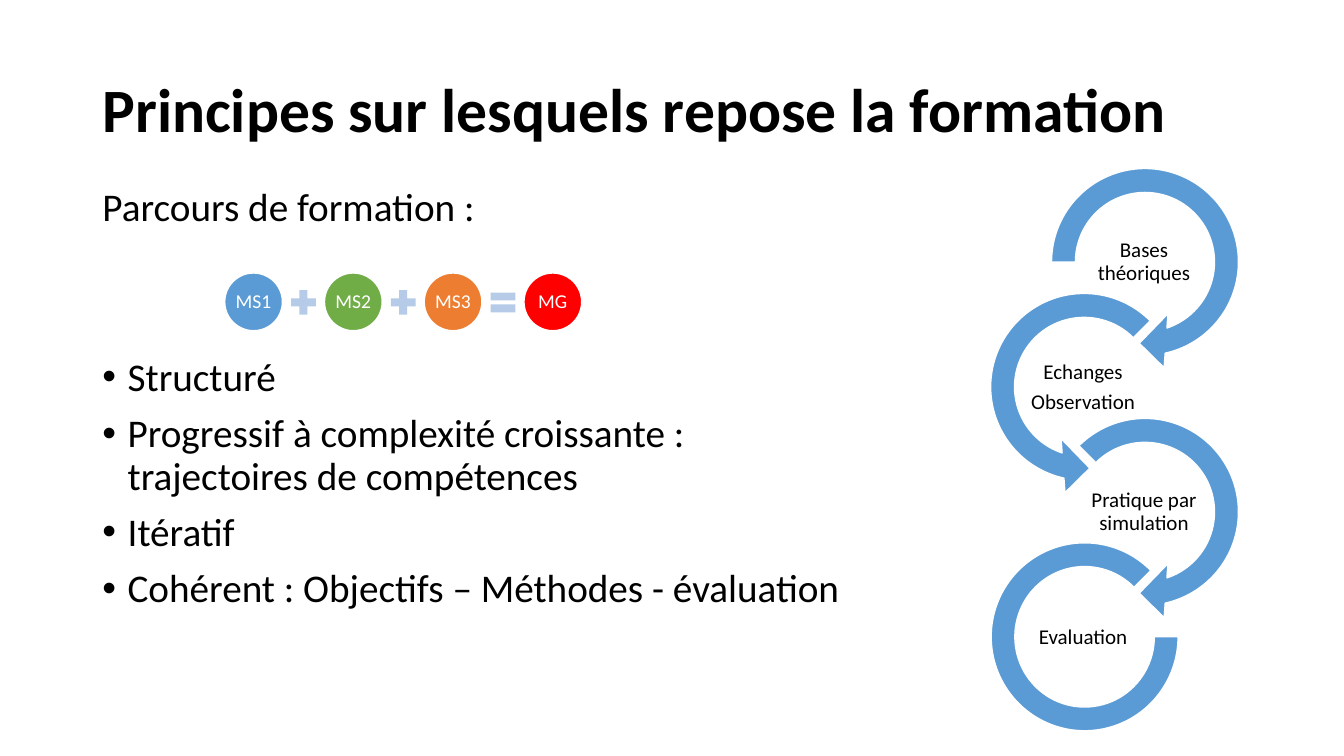
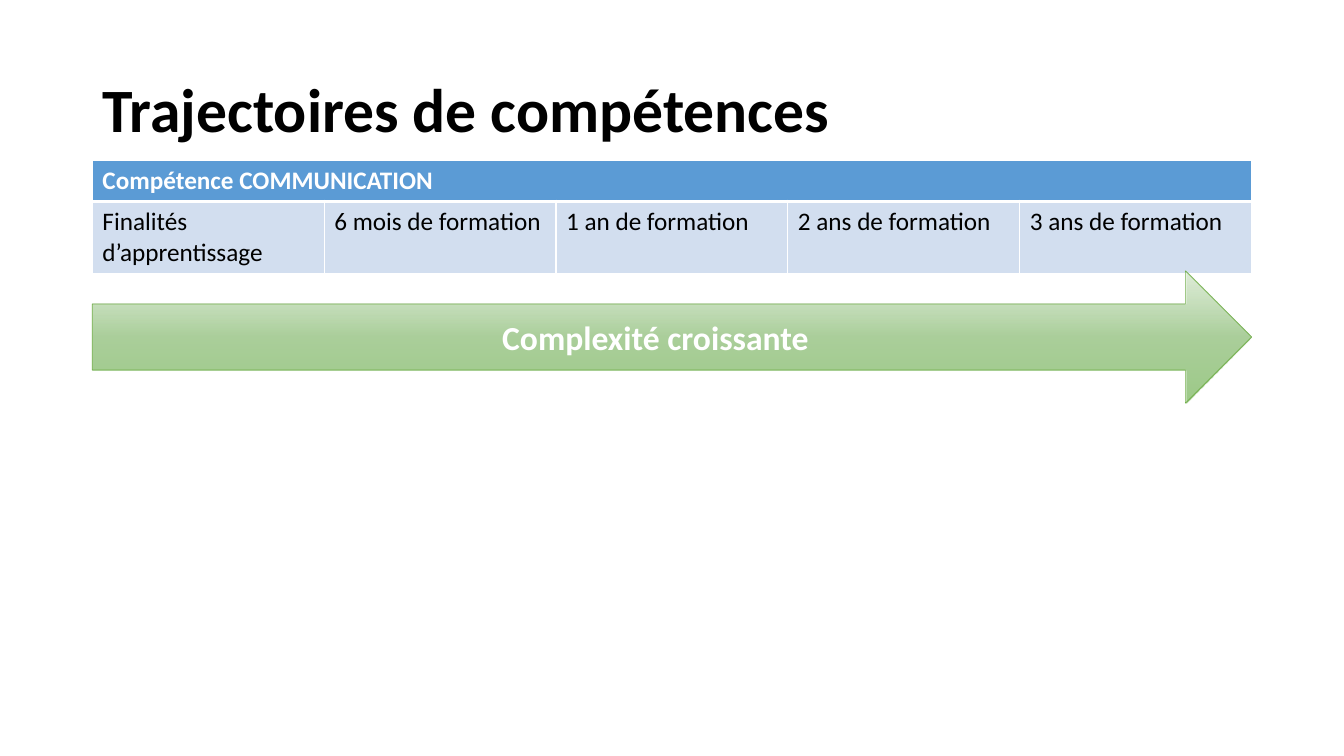
from dataclasses import dataclass

from lxml import etree
from pptx import Presentation
from pptx.dml.color import RGBColor
from pptx.enum.shapes import MSO_SHAPE as SHAPE
from pptx.enum.text import MSO_ANCHOR as ANCHOR, MSO_AUTO_SIZE as AUTO, PP_ALIGN as ALIGN
from pptx.oxml import parse_xml
from pptx.oxml.ns import nsdecls, qn
from pptx.util import Pt

EMU_PER_PX = 9525
FONT = "Calibri"
COLORS = {
    "white": "FFFFFF", "black": "000000", "blue": "5B9BD5", "green": "70AD47",
    "orange": "ED7D31", "red": "FF0000", "operator": "B5CBE7", "cell": "D2DEEF",
    "grad_top": "B5D5A7", "grad_mid": "AACE9A", "grad_end": "9CC987",
}
MARGIN, CONTENT_W = 88, 1104


@dataclass(frozen=True)
class Box:
    x: int
    y: int
    w: int
    h: int

    def emu(self) -> tuple[int, ...]:
        return tuple(v * EMU_PER_PX for v in (self.x, self.y, self.w, self.h))


@dataclass(frozen=True)
class Module:
    label: str
    color: str
    operator: SHAPE | None = None


@dataclass(frozen=True)
class Stage:
    text: str
    shape: SHAPE
    box: Box
    label: Box
    adj: tuple[float, ...]


# Shared helpers
def rgb(name: str) -> RGBColor:
    return RGBColor.from_string(COLORS[name])


def format_p(p, size: int, color: str = "black", bold: bool = False,
             align: ALIGN = ALIGN.LEFT, spacing: float = 0.9) -> None:
    p.alignment, p.line_spacing = align, spacing
    for r in p.runs:
        f = r.font
        f.name, f.size, f.bold = FONT, Pt(size), bold
        f.color.rgb = rgb(color)


def place(sp, box: Box) -> None:
    sp.left, sp.top, sp.width, sp.height = box.emu()


def set_insets(tf, inset: float) -> None:
    tf.margin_left = tf.margin_right = tf.margin_top = tf.margin_bottom = Pt(inset)


def add_title(slide, text: str, width: int = CONTENT_W) -> None:
    sp = slide.shapes.title
    place(sp, Box(MARGIN, 38, width, 139))
    tf = sp.text_frame
    tf.text = text
    tf.auto_size, tf.vertical_anchor = AUTO.NONE, ANCHOR.MIDDLE
    format_p(tf.paragraphs[0], 44, bold=True)


def add_shape(slide, kind: SHAPE, box: Box, fill: str | None,
              line: str | None = None, weight: float = 1):
    sp = slide.shapes.add_shape(kind, *box.emu())
    sp.shadow.inherit = False
    if fill:
        sp.fill.solid()
        sp.fill.fore_color.rgb = rgb(fill)
    if line:
        sp.line.color.rgb = rgb(line)
        sp.line.width = Pt(weight)
    else:
        sp.line.fill.background()
    return sp


# Slide 1: body list
def set_bullet(p, bullet: bool) -> None:
    pr = p._p.get_or_add_pPr()
    indent = 24 * EMU_PER_PX if bullet else 0
    pr.set("marL", str(indent))
    pr.set("indent", str(-indent))
    if bullet:
        etree.SubElement(pr, qn("a:buFont")).set("typeface", "Arial")
        etree.SubElement(pr, qn("a:buChar")).set("char", "•")
    else:
        etree.SubElement(pr, qn("a:buNone"))


def add_body(slide, heading: str, items: list[str]) -> None:
    sp = slide.placeholders[1]
    place(sp, Box(MARGIN, 174, 742, 457))
    tf = sp.text_frame
    tf.text = "\n".join([heading, *items])
    tf.auto_size = AUTO.NONE
    for i, p in enumerate(tf.paragraphs):
        format_p(p, 28)
        # The first item leaves room for the row of modules
        p.space_before = Pt(91 if i == 1 else 10)
        set_bullet(p, i > 0)


# Slide 1: sum of modules
def add_modules(slide, modules: list[Module]) -> None:
    left, top, size, pitch, op_size = 214, 260, 55, 95, 32
    for i, m in enumerate(modules):
        x = left + i * pitch
        sp = add_shape(slide, SHAPE.OVAL, Box(x, top, size, size), m.color, "white")
        tf = sp.text_frame
        tf.text = m.label
        tf.word_wrap, tf.vertical_anchor = False, ANCHOR.MIDDLE
        set_insets(tf, 1.5)
        format_p(tf.paragraphs[0], 14, "white", align=ALIGN.CENTER)
        if m.operator is not None:
            op_box = Box(x + 59, top + 12, op_size, op_size)
            add_shape(slide, m.operator, op_box, "operator")


# Slide 1: chain of rings
def build_stages() -> list[Stage]:
    right, left, top, pitch, size = 987, 929, 146, 119, 207
    arrow, left_arrow = SHAPE.CIRCULAR_ARROW, SHAPE.LEFT_CIRCULAR_ARROW
    rows = [
        ("Bases théoriques", arrow, right, (0.11, 11.423, 45, 108, 0.125)),
        ("Echanges\nObservation", left_arrow, left, (0.11, 11.423, 63, 189, 0.125)),
        ("Pratique par simulation", arrow, right, (0.11, 11.423, 45, 135, 0.125)),
        ("Evaluation", SHAPE.BLOCK_ARC, left, (0, 189, 0.127)),
    ]
    stages = []
    for i, (text, kind, x, adj) in enumerate(rows):
        y = top + i * pitch
        box = Box(x, y, size, size)
        if kind == SHAPE.BLOCK_ARC:
            box = Box(x + 15, y + 14, 178, 179)
        stages.append(Stage(text, kind, box, Box(x + 45, y + 75, 115, 58), adj))
    return stages


def add_stage(slide, stage: Stage) -> None:
    sp = add_shape(slide, stage.shape, stage.box, "blue", "white")
    for i, value in enumerate(stage.adj):
        sp.adjustments[i] = value
    tf = slide.shapes.add_textbox(*stage.label.emu()).text_frame
    tf.text = stage.text
    tf.word_wrap, tf.vertical_anchor = True, ANCHOR.MIDDLE
    set_insets(tf, 1)
    for p in tf.paragraphs:
        format_p(p, 15, align=ALIGN.CENTER)
        p.space_after = Pt(5)


# Slide 2: table
def set_borders(cell, bottom: int = 1, top: int = 1) -> None:
    pr = cell._tc.get_or_add_tcPr()
    weights = {"L": 1, "R": 1, "T": top, "B": bottom}
    for i, (side, weight) in enumerate(weights.items()):
        pr.insert(i, parse_xml(
            f'<a:ln{side} {nsdecls("a")} w="{Pt(weight)}"><a:solidFill>'
            f'<a:srgbClr val="{COLORS["white"]}"/></a:solidFill></a:ln{side}>'))


def add_skill_table(slide, heading: str, labels: list[str]) -> None:
    heights = (39, 67)
    box = Box(MARGIN, 153, CONTENT_W, sum(heights))
    table = slide.shapes.add_table(2, len(labels), *box.emu()).table
    for row, height in zip(table.rows, heights):
        row.height = height * EMU_PER_PX
    for c, label in enumerate(labels):
        head, cell = table.cell(0, c), table.cell(1, c)
        head.text, cell.text = heading if c == 0 else "", label
        for item, fill, color, bold in ((head, "blue", "white", True),
                                        (cell, "cell", "black", False)):
            item.fill.solid()
            item.fill.fore_color.rgb = rgb(fill)
            format_p(item.text_frame.paragraphs[0], 18, color, bold, spacing=1.0)
        set_borders(head, bottom=3)
        set_borders(cell, top=3)
    table.cell(0, 0).merge(table.cell(0, len(labels) - 1))


# Slide 2: gradient arrow
def add_growth_arrow(slide, text: str) -> None:
    box = Box(MARGIN, 258, CONTENT_W, 126)
    sp = add_shape(slide, SHAPE.RIGHT_ARROW, box, None, "green", 0.5)
    stops = ((0, "grad_top", 43), (50, "grad_mid", 100), (100, "grad_end", 100))
    gs = "".join(
        f'<a:gs pos="{pos * 1000}"><a:srgbClr val="{COLORS[name]}">'
        f'<a:alpha val="{alpha * 1000}"/></a:srgbClr></a:gs>'
        for pos, name, alpha in stops)
    geom = sp._element.spPr.find(qn("a:prstGeom"))
    geom.addnext(parse_xml(
        f'<a:gradFill {nsdecls("a")} rotWithShape="1"><a:gsLst>{gs}</a:gsLst>'
        '<a:lin ang="5400000" scaled="0"/></a:gradFill>'))
    tf = sp.text_frame
    tf.text = text
    tf.vertical_anchor = ANCHOR.MIDDLE
    format_p(tf.paragraphs[0], 24, "white", True, ALIGN.CENTER, 1.0)


def build_principles(prs) -> None:
    slide = prs.slides.add_slide(prs.slide_layouts[1])
    add_title(slide, "Principes sur lesquels repose la formation")
    add_body(slide, "Parcours de formation :", [
        "Structuré",
        "Progressif à complexité croissante : trajectoires de compétences",
        "Itératif",
        "Cohérent : Objectifs – Méthodes - évaluation",
    ])
    add_modules(slide, [
        Module("MS1", "blue", SHAPE.MATH_PLUS),
        Module("MS2", "green", SHAPE.MATH_PLUS),
        Module("MS3", "orange", SHAPE.MATH_EQUAL),
        Module("MG", "red"),
    ])
    for stage in build_stages():
        add_stage(slide, stage)


def build_trajectories(prs) -> None:
    slide = prs.slides.add_slide(prs.slide_layouts[5])
    add_title(slide, "Trajectoires de compétences", 1130)
    add_skill_table(slide, "Compétence COMMUNICATION", [
        "Finalités d’apprentissage", "6 mois de formation", "1 an de formation",
        "2 ans de formation", "3 ans de formation",
    ])
    add_growth_arrow(slide, "Complexité croissante")


def main() -> None:
    prs = Presentation()
    prs.slide_width, prs.slide_height = 1280 * EMU_PER_PX, 720 * EMU_PER_PX
    build_principles(prs)
    build_trajectories(prs)
    prs.save("out.pptx")


if __name__ == "__main__":
    main()
